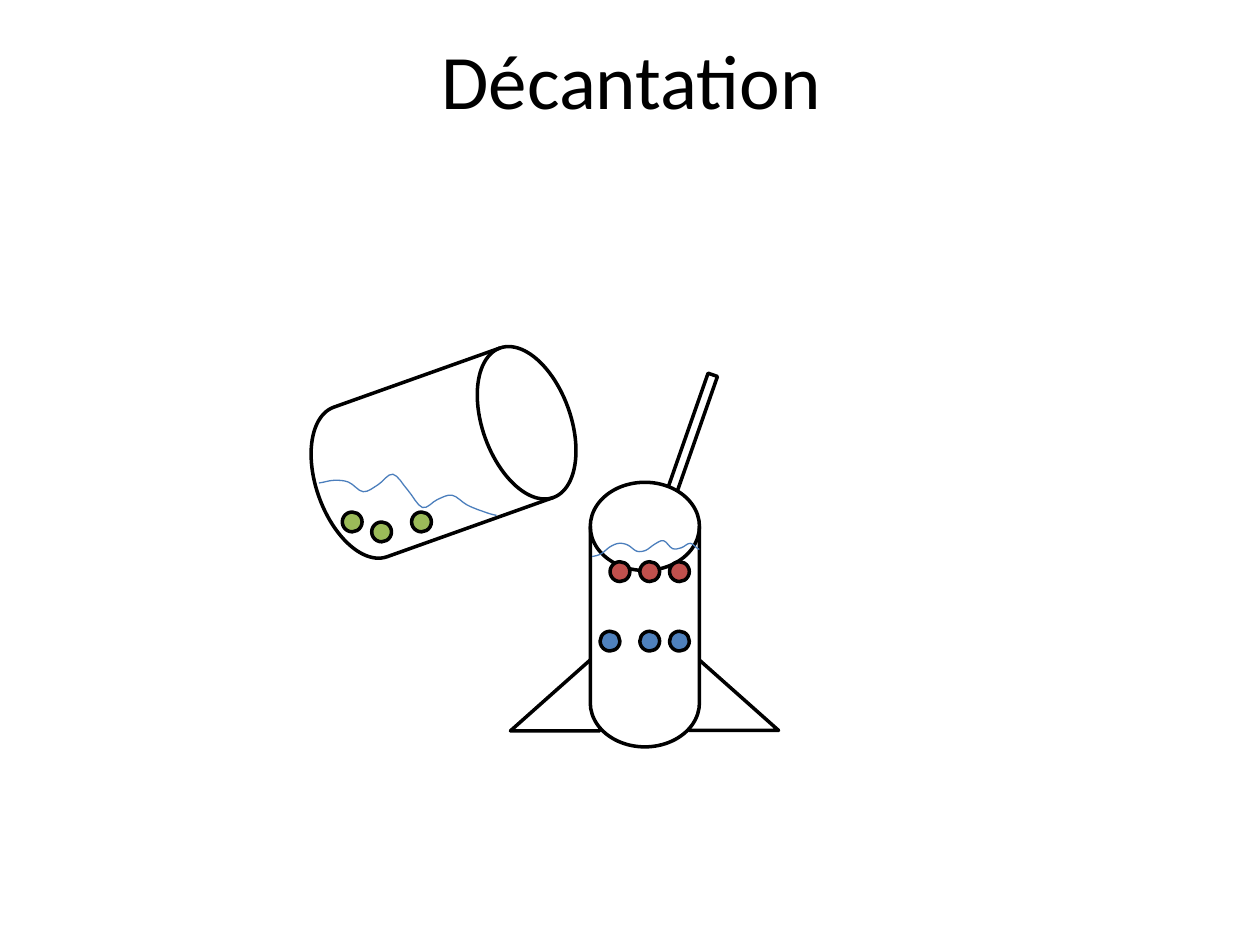
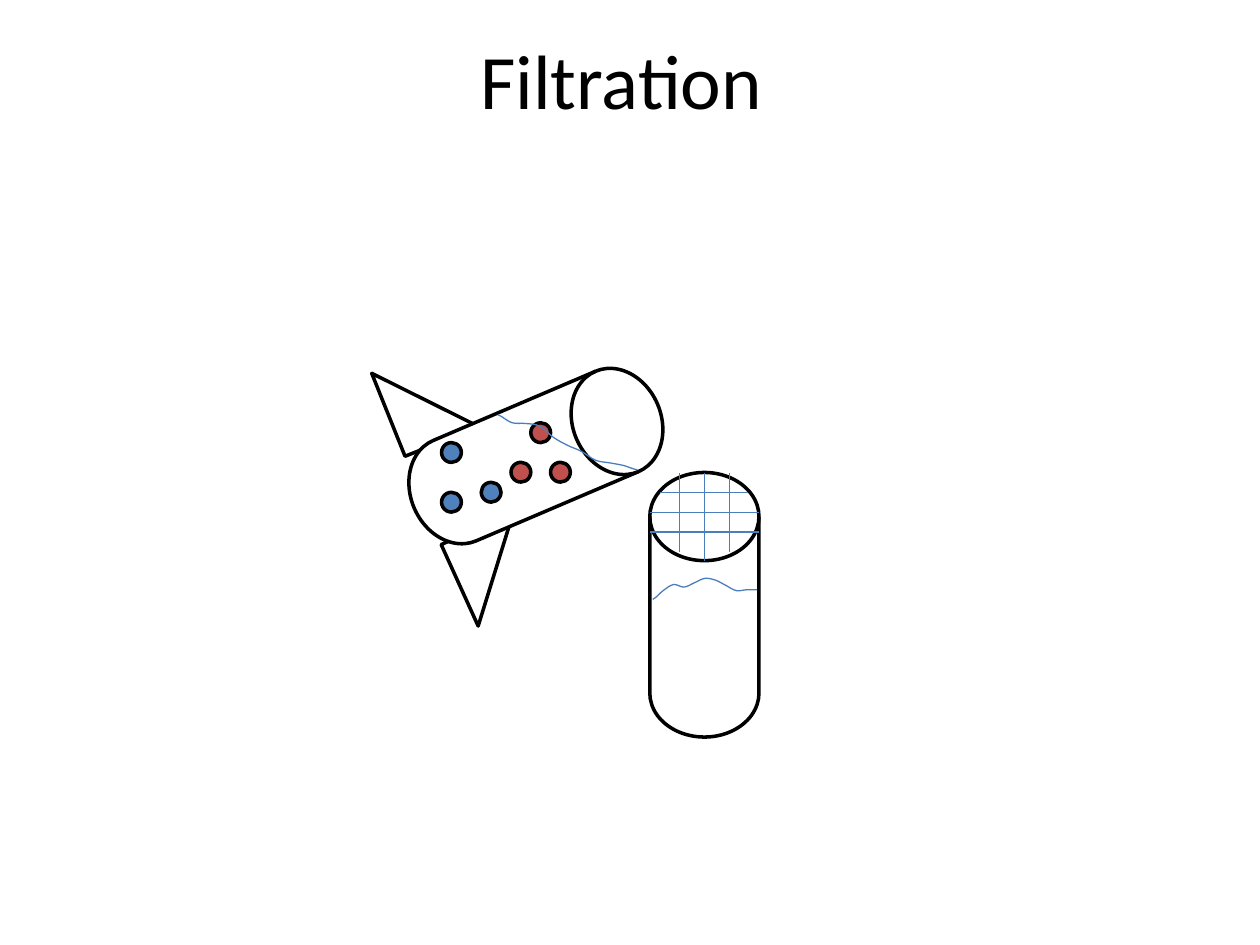
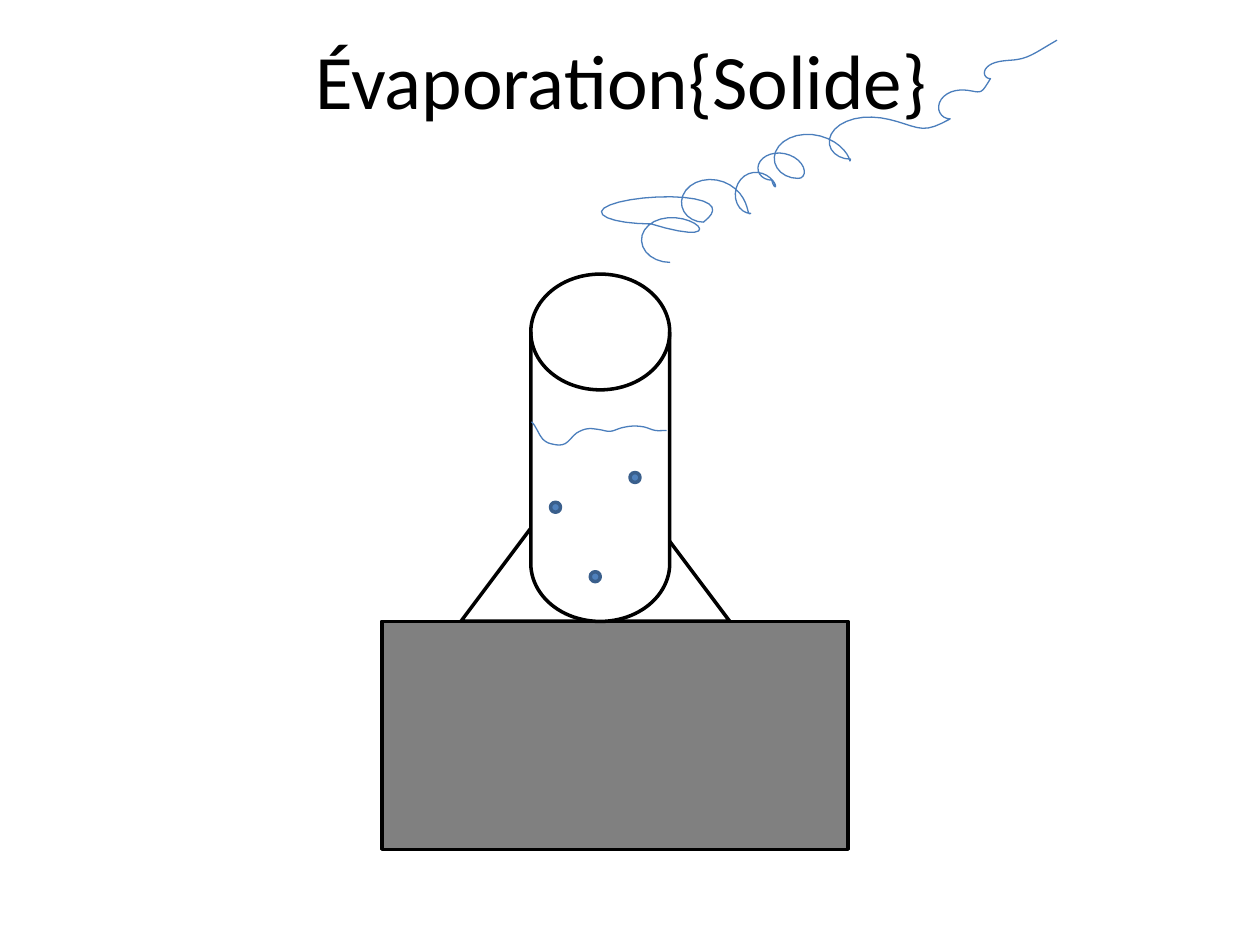
from itertools import pairwise
from math import cos, pi, sin
from lxml.etree import SubElement
from pptx import Presentation
from pptx.dml.color import RGBColor
from pptx.enum.shapes import MSO_CONNECTOR, MSO_SHAPE
from pptx.enum.text import MSO_ANCHOR, PP_ALIGN
from pptx.oxml.ns import qn
from pptx.util import Pt

FONT = "Calibri"
BLACK = "000000"
WHITE = "FFFFFF"
GREY = "808080"
BLUE = "4F81BD"
DARK_BLUE = "3A5F8C"
RED = "C0504D"
GREEN = "9BBB59"
WATER = "4B7EBC"

OUTLINE = 2
THIN = 0.75
TUBE = (62.4, 151.2)
FOOT = (51.1, 45.4)
FOOT_UPRIGHT = (45.4, 51.1)
BEAD = (11.3, 11.3)
BUBBLE = (5.7, 5.7)
STEPS_PER_WAVE = 4
STEPS_PER_TURN = 24

# Each puff of steam: center x, center y, horizontal radius, vertical radius
STEAM_PUFFS = [
    (383, 138, 16, 12),
    (372, 121, 29, 7),
    (402, 115, 13, 12),
    (429, 111, 9, 11),
    (441, 96, 8, 7),
    (456, 90, 14, 12),
    (486, 80, 13, 11),
    (543, 61, 7, 7),
    (566, 41, 4, 4),
    (604, 23, 0, 0),
]


def color(hex_code):
    return RGBColor.from_string(hex_code)


def set_line(line, hex_code, width):
    line.color.rgb = color(hex_code)
    line.width = Pt(width)


def add_titled_slide(prs, title, left):
    slide = prs.slides.add_slide(prs.slide_layouts[5])
    heading = slide.shapes.title
    heading.left, heading.top = Pt(left), Pt(0)
    heading.width, heading.height = Pt(648), Pt(90)
    heading.text_frame.vertical_anchor = MSO_ANCHOR.MIDDLE
    paragraph = heading.text_frame.paragraphs[0]
    paragraph.alignment = PP_ALIGN.CENTER
    run = paragraph.add_run()
    run.text = title
    run.font.name = FONT
    run.font.size = Pt(44)
    run.font.color.rgb = color(BLACK)
    return slide


def add_part(slide, kind, corner, size, fill=WHITE, rotation=0, outline=BLACK):
    part = slide.shapes.add_shape(kind, *map(Pt, corner + size))
    part.shadow.inherit = False
    part.rotation = rotation
    part.fill.solid()
    part.fill.fore_color.rgb = color(fill)
    set_line(part.line, outline, OUTLINE)


def add_tube(slide, corner, size=TUBE, rotation=0):
    add_part(slide, MSO_SHAPE.FLOWCHART_MAGNETIC_DISK, corner, size, rotation=rotation)


def add_foot(slide, corner, size, rotation=0):
    add_part(slide, MSO_SHAPE.RIGHT_TRIANGLE, corner, size, rotation=rotation)


def add_beads(slide, fill, corners):
    for corner in corners:
        add_part(slide, MSO_SHAPE.OVAL, corner, BEAD, fill)


def add_bubbles(slide, corners):
    for corner in corners:
        add_part(slide, MSO_SHAPE.FLOWCHART_CONNECTOR, corner, BUBBLE, BLUE,
                 outline=DARK_BLUE)


def add_trace(slide, points):
    """Draw an open, unfilled line through the points."""
    start, *rest = [(Pt(x), Pt(y)) for x, y in points]
    builder = slide.shapes.build_freeform(*start)
    builder.add_line_segments(rest, close=False)
    trace = builder.convert_to_shape()
    trace.shadow.inherit = False
    trace.fill.background()
    set_line(trace.line, WATER, THIN)


def blend(start, end, share):
    return start + (end - start) * share


def smooth_level(before, start, end, after, share):
    """Catmull-Rom height between start and end, guided by their neighbours."""
    slope_in, slope_out = (end - before) / 2, (after - start) / 2
    rise = end - start
    return (start + slope_in * share
            + (3 * rise - 2 * slope_in - slope_out) * share ** 2
            + (slope_in + slope_out - 2 * rise) * share ** 3)


def add_water(slide, left, right, levels):
    """Draw a smooth surface through heights spaced evenly from left to right."""
    gap = (right - left) / (len(levels) - 1)
    padded = [levels[0], *levels, levels[-1]]
    points = []
    for wave in range(len(levels) - 1):
        for step in range(STEPS_PER_WAVE):
            share = step / STEPS_PER_WAVE
            points.append((left + gap * (wave + share),
                           smooth_level(*padded[wave:wave + 4], share)))
    add_trace(slide, points + [(right, levels[-1])])


def add_steam(slide, puffs):
    """Curl clockwise once round each puff, from its bottom, drifting to the next."""
    points = []
    for puff, next_puff in pairwise(puffs):
        for step in range(STEPS_PER_TURN):
            turn = step / STEPS_PER_TURN
            x, y, radius_x, radius_y = (
                blend(here, there, turn ** 3) for here, there in zip(puff, next_puff))
            angle = pi / 2 + 2 * pi * turn
            points.append((x + radius_x * cos(angle), y + radius_y * sin(angle)))
    add_trace(slide, points + [puffs[-1][:2]])


def add_thread(slide, start, end):
    thread = slide.shapes.add_connector(MSO_CONNECTOR.STRAIGHT, *map(Pt, start + end))
    set_line(thread.line, WATER, THIN)
    SubElement(thread._element.spPr, qn("a:effectLst"))


def add_filter(slide, center, top):
    """Weave three threads each way over the mouth of a tube."""
    for row, half_width in enumerate((25.2, 31, 31), start=1):
        y = top + 11.34 * row
        add_thread(slide, (center - half_width, y), (center + half_width, y))
    for column, length in ((-1, 45.4), (0, 50.4), (1, 45.4)):
        x = center + 14.4 * column
        add_thread(slide, (x, top), (x, top + length))


def build_decantation(prs):
    slide = add_titled_slide(prs, "Décantation", 36.7)
    add_foot(slide, (294.5, 369.4), FOOT_UPRIGHT, 270)
    add_foot(slide, (393.8, 372), FOOT)
    add_part(slide, MSO_SHAPE.RECTANGLE, (376.6, 209.5), (5.7, 168.5), rotation=19.3)
    add_tube(slide, (208.1, 182.9), (90.7, 151.2), 70.4)
    add_tube(slide, (337.3, 275.6))
    add_beads(slide, BLUE, [(x, 360.7) for x in (342.9, 365.6, 382.6)])
    add_beads(slide, RED, [(x, 321) for x in (348.6, 365.6, 382.6)])
    add_beads(slide, GREEN, [(212.4, 298.3), (195.6, 292.6), (235.2, 292.6)])
    add_water(slide, 182.2, 283.7, [276, 274.5, 275.5, 281, 277, 271, 280, 290,
                                    285.5, 283, 288.5, 292, 294.5])
    add_water(slide, 338.4, 399.6, [318, 316.5, 312.5, 310.5, 311.5, 315, 314.5,
                                    311, 309, 313.5, 313, 310.5, 314])


def build_filtration(prs):
    slide = add_titled_slide(prs, "Filtration", 31)
    add_foot(slide, (220.3, 203), FOOT_UPRIGHT, 338.1)
    add_foot(slide, (257.8, 302.4), FOOT, 65.6)
    add_tube(slide, (275, 185), rotation=66.9)
    add_beads(slide, BLUE, [(275, 275.6), (252.3, 281.3), (252.3, 252.9)])
    add_beads(slide, RED, [(303.3, 241.6), (314.6, 264.2), (292, 264.2)])
    add_tube(slide, (371.3, 270))
    add_filter(slide, 402.5, 270)
    add_water(slide, 284.4, 364.3, [237, 241.5, 242, 243.5, 250, 254.5, 258, 263,
                                    264.5, 266, 268.5])
    add_water(slide, 373, 432.7, [342.5, 337.5, 334, 335.5, 333, 330.5, 331.5,
                                  334.5, 337.5, 337, 337])


def build_evaporation(prs):
    slide = add_titled_slide(prs, "Évaporation{Solide}", 31)
    add_part(slide, MSO_SHAPE.ISOSCELES_TRIANGLE, (263.5, 252.7), (153.4, 102.2))
    add_part(slide, MSO_SHAPE.FLOWCHART_PROCESS, (218.2, 355), (266.4, 130.3), GREY)
    add_tube(slide, (303.3, 156.6), (79.4, 198.5))
    add_steam(slide, STEAM_PUFFS)
    add_bubbles(slide, [(314.6, 287), (360, 270), (337.3, 326.7)])
    add_water(slide, 303.8, 380.9, [241, 251, 254, 253.5, 247.5, 245, 245.5, 246.5,
                                    244.5, 243.5, 244, 246, 246])


def main():
    prs = Presentation()
    prs.slide_width, prs.slide_height = Pt(720), Pt(540)
    build_decantation(prs)
    build_filtration(prs)
    build_evaporation(prs)
    prs.save("out.pptx")


if __name__ == "__main__":
    main()
